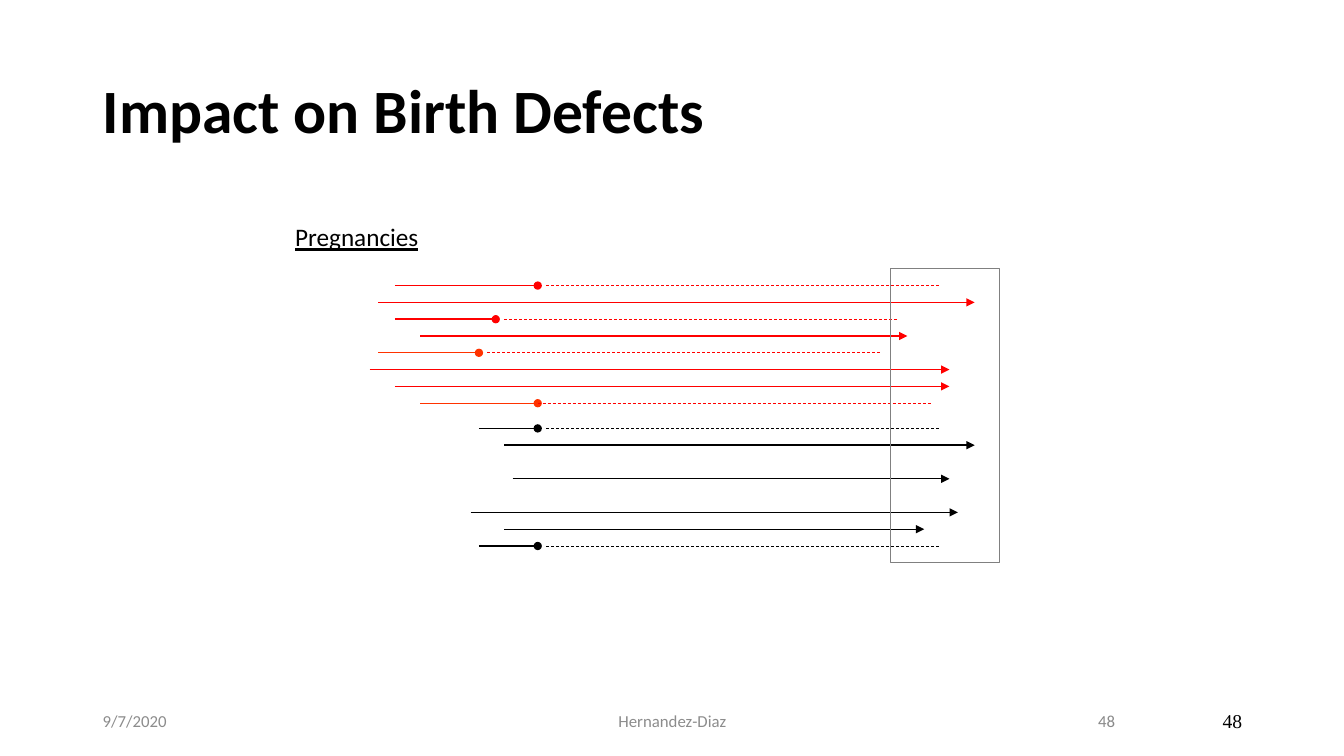
"""Build the slide on birth defects, with pregnancies as timelines on a grid of twelfths of an inch."""
from lxml import etree
from pptx import Presentation, util as u
from pptx.dml.color import RGBColor
from pptx.enum import dml, shapes, text
from pptx.oxml import ns

RED, WARM, BLACK = "FF0000", "FF3300", "000000"
UNIT = u.Inches(1) // 12
LEFT, MID, RIGHT = text.PP_ALIGN.LEFT, text.PP_ALIGN.CENTER, text.PP_ALIGN.RIGHT


def style(frame, words, size, tone, face="Calibri", align=LEFT):
    """Fill a text frame and format its only run."""
    frame.text = words
    frame.word_wrap = True
    frame.vertical_anchor = text.MSO_ANCHOR.MIDDLE
    para = frame.paragraphs[0]
    para.alignment = align
    font = para.runs[0].font
    font.size, font.name = u.Pt(size), face
    font.color.rgb = RGBColor.from_string(tone)
    return font


def draw(row, start, end, tone, head=None):
    """Draw a solid line with a head, or a thin dashed line without one."""
    wire = slide.shapes.add_connector(
        shapes.MSO_CONNECTOR.STRAIGHT, start * UNIT, row * UNIT, end * UNIT, row * UNIT)
    wire.line.color.rgb = RGBColor.from_string(tone)
    wire.line.width = u.Pt(1 if head else 0.5)
    if head:
        etree.SubElement(wire.line._get_or_add_ln(), ns.qn("a:tailEnd"), type=head)
    else:
        wire.line.dash_style = dml.MSO_LINE.DASH
    etree.SubElement(wire._element.spPr, ns.qn("a:effectLst"))


deck = Presentation()
deck.slide_width, deck.slide_height = u.Inches(13.33), u.Inches(7.5)
slide = deck.slides.add_slide(deck.slide_layouts[5])

title = slide.shapes.title
title.left, title.top = u.Inches(0.92), u.Inches(0.4)
title.width, title.height = u.Inches(11.5), u.Inches(1.45)
style(title.text_frame, "Impact on Birth Defects", 44, BLACK).bold = True
title.text_frame.paragraphs[0].line_spacing = 0.9

label = slide.shapes.add_textbox(u.Inches(2.83), u.Inches(2.15), u.Inches(3), u.Inches(0.4))
style(label.text_frame, "Pregnancies", 18, BLACK).underline = True
label.text_frame.vertical_anchor = text.MSO_ANCHOR.TOP

births = [
    (36, 45, 116, RED), (40, 50, 108, RED), (44, 44, 113, RED), (46, 47, 113, RED),
    (53, 60, 116, BLACK), (57, 61, 113, BLACK), (61, 56, 114, BLACK), (63, 60, 110, BLACK),
]
for row, start, end, tone in births:
    draw(row, start, end, tone, "triangle")

losses = [
    (34, 47, 64, 65, RED, RED), (38, 47, 59, 60, RED, RED),
    (42, 45, 57, 58, WARM, RED), (48, 50, 64, 64, WARM, RED),
    (51, 57, 64, 65, BLACK, BLACK), (65, 57, 64, 65, BLACK, BLACK),
]
for row, start, end, rest, tone, faint in losses:
    draw(row, start, end, tone, "oval")
    draw(row, rest, rest + 47, faint)

frame = slide.shapes.add_shape(
    shapes.MSO_SHAPE.RECTANGLE, 106 * UNIT, 32 * UNIT, 13 * UNIT, 35 * UNIT)
frame.shadow.inherit = False
frame.fill.background()
frame.line.color.rgb = RGBColor.from_string("808080")
frame.line.width = u.Pt(1)

feet = [
    (0.92, 3, "9/7/2020", 12, "8C8C8C", "Calibri", LEFT),
    (4.42, 4.5, "Hernandez-Diaz", 12, "8C8C8C", "Calibri", MID),
    (8.83, 2.33, "48", 12, "898989", "Calibri", RIGHT),
    (9.42, 3, "48", 14, BLACK, "Times New Roman", RIGHT),
]
for left, width, words, size, tone, face, align in feet:
    foot = slide.shapes.add_textbox(u.Inches(left), u.Inches(6.95), u.Inches(width), u.Inches(0.4))
    style(foot.text_frame, words, size, tone, face, align)

deck.save("out.pptx")
